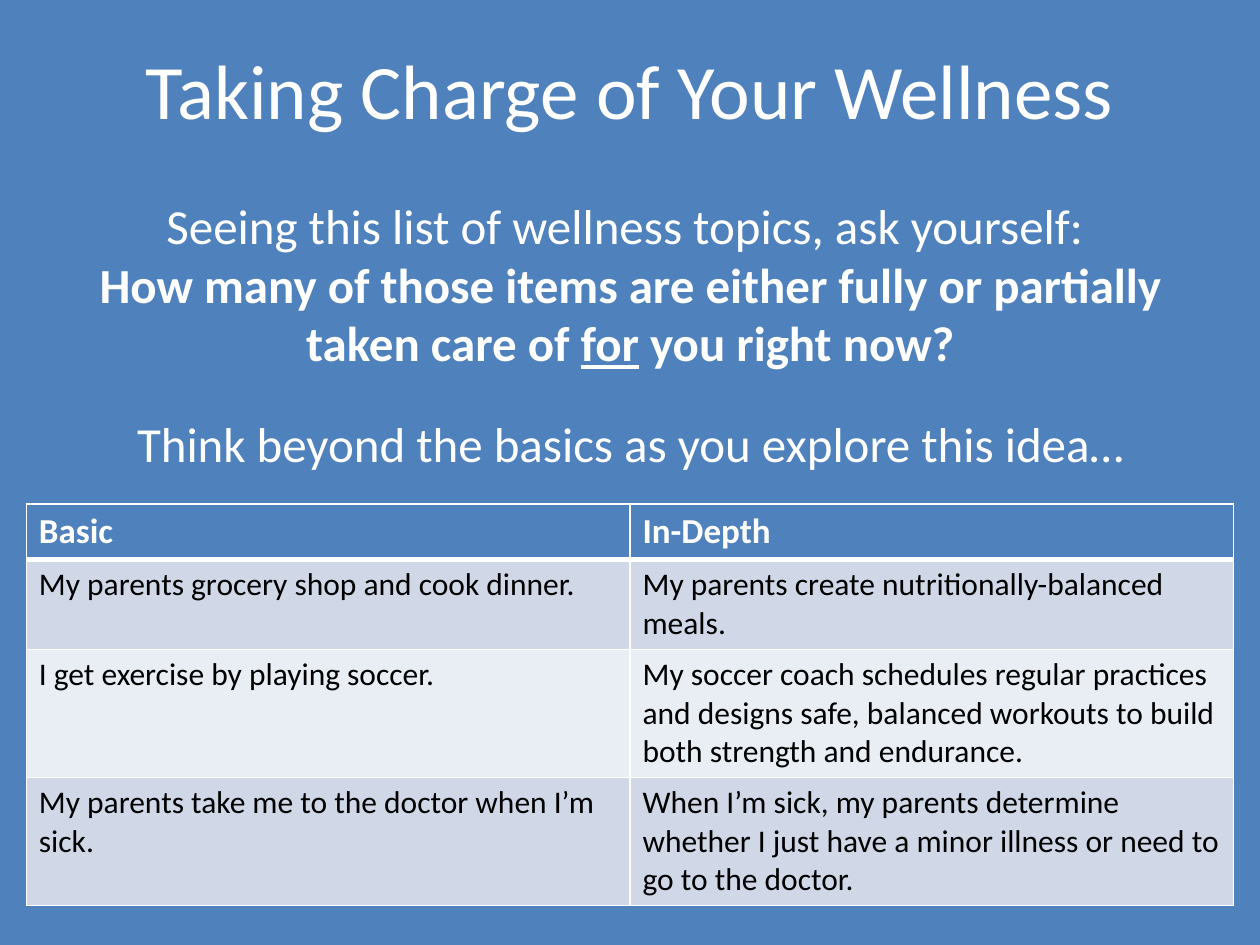
"""Build the wellness slide with its table of basic and in-depth examples."""
from dataclasses import dataclass

from lxml import etree
from pptx import Presentation
from pptx.dml.color import RGBColor
from pptx.enum import text as t
from pptx.oxml import ns
from pptx.util import Cm, Pt

BLUE = RGBColor(0x4F, 0x81, 0xBD)
PALE = RGBColor(0xD0, 0xD8, 0xE8)
LIGHT = RGBColor(0xE9, 0xED, 0xF4)
WHITE = RGBColor(0xFF, 0xFF, 0xFF)
BLACK = RGBColor(0, 0, 0)
FACE = "Calibri"


@dataclass
class Row:
    basic: str
    depth: str
    high: float
    fill: RGBColor
    ink: RGBColor = BLACK
    size: int = 18
    bold: bool = False
    base: int = 1


ROWS = [
    Row("Basic", "In-Depth", 1.11, BLUE, WHITE, 20, True, 3),
    Row("My parents grocery shop and cook dinner.",
        "My parents create nutritionally-balanced meals.", 1.81, PALE),
    Row("I get exercise by playing soccer.",
        "My soccer coach schedules regular practices and designs safe, "
        "balanced workouts to build both strength and endurance.", 2.58, LIGHT),
    Row("My parents take me to the doctor when I’m sick.",
        "When I’m sick, my parents determine whether I just have a minor "
        "illness or need to go to the doctor.", 2.58, PALE),
]


def style(para, size: int, ink: RGBColor) -> None:
    """Set the font of a whole paragraph."""
    font = para.font
    font.name, font.size, font.color.rgb = FACE, Pt(size), ink


def place(shape, left: float, top: float, wide: float, high: float) -> None:
    """Move and size a shape, in centimetres."""
    shape.left, shape.top = Cm(left), Cm(top)
    shape.width, shape.height = Cm(wide), Cm(high)


def edge(cell, side: str, width: int) -> None:
    """Draw one white border of a cell."""
    line = etree.SubElement(cell._tc.get_or_add_tcPr(), ns.qn(f"a:ln{side}"),
                            w=str(Pt(width)))
    fill = etree.SubElement(line, ns.qn("a:solidFill"))
    etree.SubElement(fill, ns.qn("a:srgbClr"), val=str(WHITE))


def add_title(slide) -> None:
    """Fill the title placeholder."""
    title = slide.shapes.title
    place(title, 1.27, 0.2, 22.86, 3.18)
    title.text_frame.text = "Taking Charge of Your Wellness"
    style(title.text_frame.paragraphs[0], 44, WHITE)


def add_body(slide) -> None:
    """Fill the body placeholder with the question and the prompt."""
    body = slide.placeholders[1]
    place(body, 0.64, 3.81, 24.13, 6.15)
    frame = body.text_frame
    frame.auto_size = t.MSO_AUTO_SIZE.NONE
    ask, think = frame.paragraphs[0], frame.add_paragraph()
    ask.add_run().text = "Seeing this list of wellness topics, ask yourself: "
    ask.add_line_break()
    for words, under in (
            ("How many of those items are either fully or partially "
             "taken care of ", False),
            ("for", True), (" you right now?", False)):
        run = ask.add_run()
        run.text = words
        run.font.bold, run.font.underline = True, under
    think.text = "Think beyond the basics as you explore this idea…"
    ask.space_after = Pt(18)
    for para in (ask, think):
        style(para, 28, WHITE)
        para.alignment = t.PP_ALIGN.CENTER
        props = para._p.get_or_add_pPr()
        props.set("marL", "0")
        props.set("indent", "0")
        none = etree.Element(ns.qn("a:buNone"))
        props.find(ns.qn("a:defRPr")).addprevious(none)


def add_grid(slide, rows: list[Row]) -> None:
    """Add the table of examples."""
    high = sum(row.high for row in rows)
    table = slide.shapes.add_table(len(rows), 2, Cm(0.53), Cm(10.16),
                                   Cm(24.34), Cm(high)).table
    for i, row in enumerate(rows):
        table.rows[i].height = Cm(row.high)
        top = rows[i - 1].base if i else 1
        for cell, words in zip(table.rows[i].cells, (row.basic, row.depth)):
            cell.text = words
            para = cell.text_frame.paragraphs[0]
            style(para, row.size, row.ink)
            para.font.bold = row.bold
            for side, width in zip("LRTB", (1, 1, top, row.base)):
                edge(cell, side, width)
            cell.fill.solid()
            cell.fill.fore_color.rgb = row.fill


def main() -> None:
    """Build and save the slide."""
    deck = Presentation()
    deck.slide_width, deck.slide_height = Cm(25.4), Cm(19.05)
    slide = deck.slides.add_slide(deck.slide_layouts[1])
    back = slide.background.fill
    back.solid()
    back.fore_color.rgb = BLUE
    add_title(slide)
    add_body(slide)
    add_grid(slide, ROWS)
    deck.save("out.pptx")


if __name__ == "__main__":
    main()
